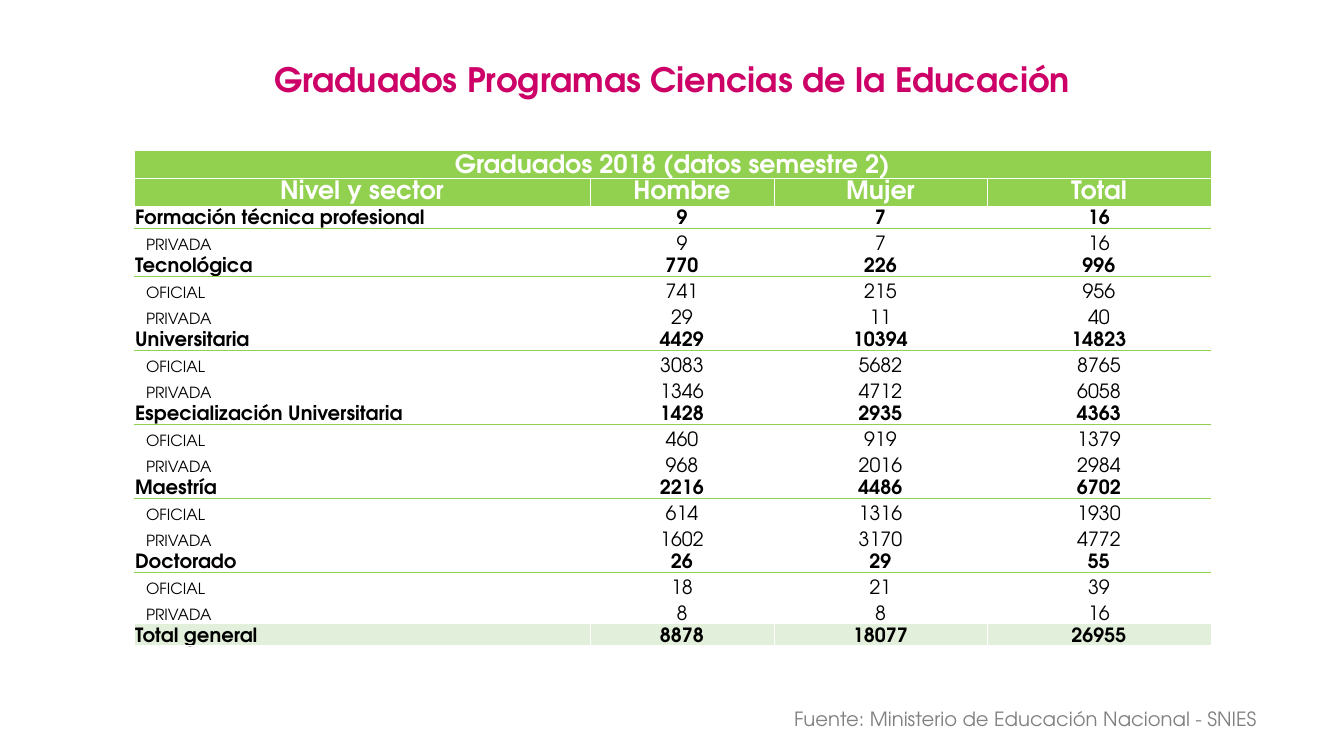
from lxml.etree import SubElement
from pptx import Presentation
from pptx.dml.color import RGBColor
from pptx.enum.text import MSO_ANCHOR, PP_ALIGN
from pptx.oxml.ns import qn
from pptx.util import Emu, Pt

FONT = "TeX Gyre Adventor"
GREEN, PALE_GREEN, WHITE, BLACK = "92D050", "E2EFDA", "FFFFFF", "000000"
MAGENTA, GRAY = "CC0066", "808080"
COLUMN_WIDTHS = [456, 184, 213, 224]
HEADINGS = ["Nivel y sector", "Hombre", "Mujer", "Total"]
LEVELS = [
    ("Formación técnica profesional", (9, 7, 16), [("PRIVADA", (9, 7, 16))]),
    ("Tecnológica", (770, 226, 996),
     [("OFICIAL", (741, 215, 956)), ("PRIVADA", (29, 11, 40))]),
    ("Universitaria", (4429, 10394, 14823),
     [("OFICIAL", (3083, 5682, 8765)), ("PRIVADA", (1346, 4712, 6058))]),
    ("Especialización Universitaria", (1428, 2935, 4363),
     [("OFICIAL", (460, 919, 1379)), ("PRIVADA", (968, 2016, 2984))]),
    ("Maestría", (2216, 4486, 6702),
     [("OFICIAL", (614, 1316, 1930)), ("PRIVADA", (1602, 3170, 4772))]),
    ("Doctorado", (26, 29, 55),
     [("OFICIAL", (18, 21, 39)), ("PRIVADA", (8, 8, 16))]),
]
GRAND_TOTAL = ("Total general", (8878, 18077, 26955))


def px(length):
    """Turn pixels into EMU."""
    return Emu(round(length * 914400 / 100.8))


def color(value):
    """Turn a hex string into a colour."""
    return RGBColor.from_string(value)


def write(frame, text, size=14, bold=False, ink=BLACK, align=PP_ALIGN.CENTER):
    """Put one formatted line of text into a text frame."""
    paragraph = frame.paragraphs[0]
    paragraph.alignment = align
    run = paragraph.add_run()
    run.text = text
    run.font.name = FONT
    run.font.size = Pt(size)
    run.font.bold = bold
    run.font.color.rgb = color(ink)


def place(part, left, top, width, height):
    """Move and size a part of the slide."""
    part.left, part.top = px(left), px(top)
    part.width, part.height = px(width), px(height)


def set_borders(cell, top, bottom):
    """Draw half-point borders, white at the sides."""
    properties = cell._tc.get_or_add_tcPr()
    for side, ink in zip("LRTB", (WHITE, WHITE, top, bottom)):
        line = SubElement(properties, qn(f"a:ln{side}"), w=str(Pt(0.5)))
        fill = SubElement(line, qn("a:solidFill"))
        SubElement(fill, qn("a:srgbClr"), val=ink)


def format_cell(cell, text, fill=None, indent=1, anchor=MSO_ANCHOR.BOTTOM,
                top=WHITE, bottom=WHITE, **text_format):
    """Fill one table cell with text, margins, borders and colour."""
    cell.margin_left, cell.margin_right = px(indent), px(1)
    cell.margin_top, cell.margin_bottom = px(1), 0
    cell.vertical_anchor = anchor
    set_borders(cell, top, bottom)
    if fill:
        cell.fill.solid()
        cell.fill.fore_color.rgb = color(fill)
    else:
        cell.fill.background()
    write(cell.text_frame, text, **text_format)


def fill_row(row, label, counts, height, label_size=14, indent=1, **cell_format):
    """Write a label and its counts across one table row."""
    row.height = px(height)
    label_cell, *count_cells = row.cells
    format_cell(label_cell, label, indent=indent, size=label_size,
                align=PP_ALIGN.LEFT, **cell_format)
    for cell, count in zip(count_cells, counts):
        format_cell(cell, str(count), **cell_format)


def add_graduates_table(slide):
    """Add the table of graduates by level and sector."""
    row_count = 3 + sum(1 + len(sectors) for _, _, sectors in LEVELS)
    table = slide.shapes.add_table(
        row_count, len(HEADINGS), px(134), px(150), px(sum(COLUMN_WIDTHS)), px(500)).table
    table.first_row = table.horz_banding = False
    for column, width in zip(table.columns, COLUMN_WIDTHS):
        column.width = px(width)
    rows = iter(table.rows)

    heading_format = dict(fill=GREEN, size=18, bold=True, ink=WHITE)
    banner = next(rows)
    banner.height = px(28)
    banner.cells[0].merge(table.cell(0, len(HEADINGS) - 1))
    format_cell(banner.cells[0], "Graduados 2018 (datos semestre 2)", **heading_format)
    heading_row = next(rows)
    heading_row.height = px(28)
    for cell, heading in zip(heading_row.cells, HEADINGS):
        format_cell(cell, heading, anchor=MSO_ANCHOR.MIDDLE, **heading_format)

    for level, counts, sectors in LEVELS:
        fill_row(next(rows), level, counts, 22, bold=True, bottom=GREEN)
        for index, (sector, sector_counts) in enumerate(sectors):
            fill_row(next(rows), sector, sector_counts, 26, label_size=11,
                     indent=12, top=WHITE if index else GREEN)
    fill_row(next(rows), *GRAND_TOTAL, 22, bold=True, fill=PALE_GREEN)


def main():
    """Build and save the slide."""
    deck = Presentation()
    deck.slide_width, deck.slide_height = px(1344), px(756)
    slide = deck.slides.add_slide(deck.slide_layouts[5])

    title = slide.shapes.title
    place(title, 121, 54, 1102, 50)
    write(title.text_frame, "Graduados Programas Ciencias de la Educación",
          size=24, bold=True, ink=MAGENTA)

    add_graduates_table(slide)

    source = slide.shapes.add_textbox(px(595), px(702), px(672), px(34))
    source.text_frame.word_wrap = True
    write(source.text_frame, "Fuente: Ministerio de Educación Nacional - SNIES",
          ink=GRAY, align=PP_ALIGN.RIGHT)
    deck.save("out.pptx")


if __name__ == "__main__":
    main()
